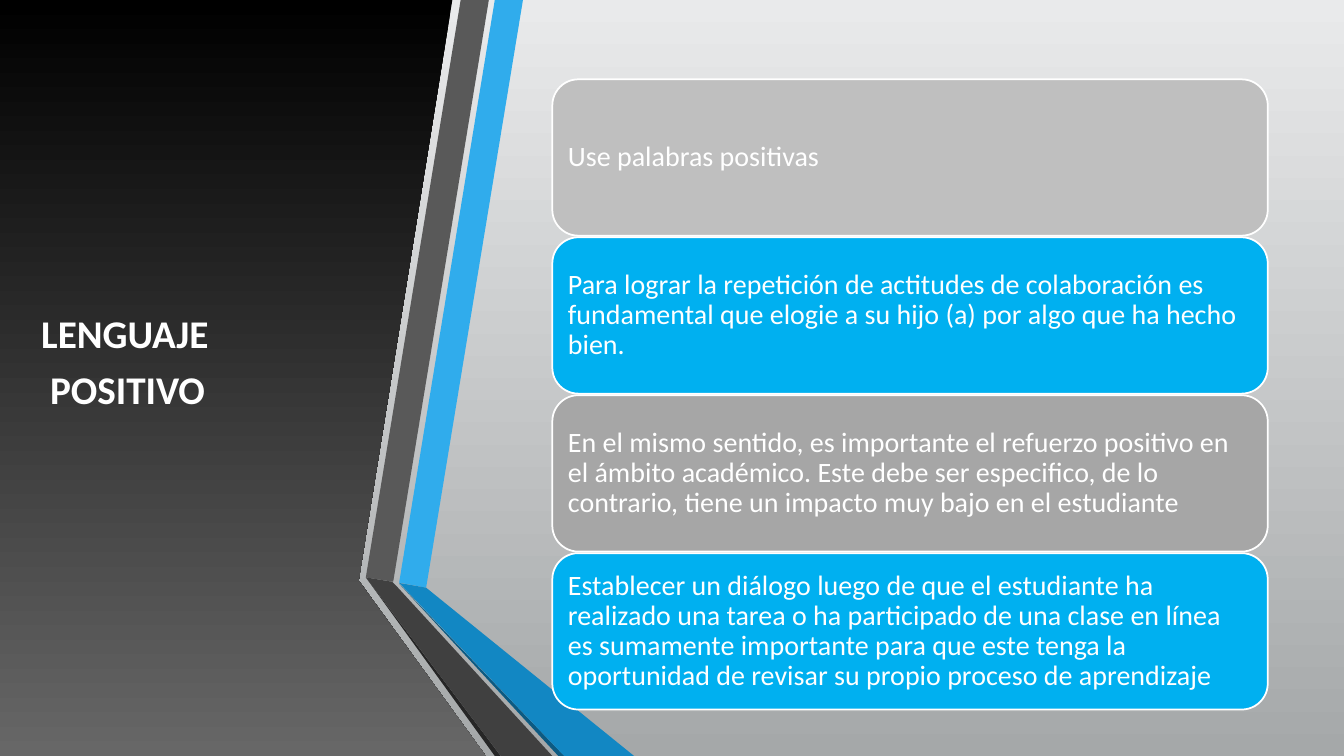
"""Build the slide on positive language: a folded ribbon beside four stacked cards."""
from pptx import Presentation
from pptx.dml.color import RGBColor
from pptx.enum.shapes import MSO_SHAPE
from pptx.enum.text import MSO_ANCHOR, PP_ALIGN
from pptx.util import Cm, Pt

THEME = {
    "font": "Calibri",
    "title_size": Pt(28),
    "card_size": Pt(20),
    "text": RGBColor.from_string("FFFFFF"),
    "backdrop": ("E9EAEB", "A5A8A9"),
    "panel": ("000000", "676767"),
    "blue": "30ACEC",
    "blue_fold": "1287C3",
    "blue_shade": "0C5A82",
    "gray": "595959",
    "gray_fold": "404040",
    "gray_shade": "262626",
    "cards": ("BFBFBF", "00B0F0", "A6A6A6", "00B0F0"),
}


def paint(fill, colors):
    """Fill with one colour, or with a gradient given as (top, bottom)."""
    if isinstance(colors, str):
        fill.solid()
        fill.fore_color.rgb = RGBColor.from_string(colors)
        return
    fill.gradient()
    fill.gradient_angle = 270
    for stop, color in zip(fill.gradient_stops, colors):
        stop.color.rgb = RGBColor.from_string(color)


def write(shape, lines, frame_format, paragraph_format, font_format):
    """Write one paragraph per line and apply the format values."""
    frame = shape.text_frame
    for name, value in frame_format.items():
        setattr(frame, name, value)
    for index, line in enumerate(lines):
        paragraph = frame.add_paragraph() if index else frame.paragraphs[0]
        for name, value in paragraph_format.items():
            setattr(paragraph, name, value)
        run = paragraph.add_run()
        run.text = line
        run.font.color.rgb = THEME["text"]
        for name, value in font_format.items():
            setattr(run.font, name, value)


presentation = Presentation()
presentation.slide_width = Cm(33.87)
presentation.slide_height = Cm(19.05)
slide = presentation.slides.add_slide(presentation.slide_layouts[6])
paint(slide.background.fill, THEME["backdrop"])

bottom = 19.05
polygons = [
    ("panel", [(0, 0), (11.4, 0), (9.04, 14.63), (12.24, bottom), (0, bottom)]),
    ("blue", [(10.06, 14.68), (10.74, 14.81), (13.18, 0), (12.47, 0)]),
    ("gray", [(12.32, 0), (11.61, 0), (9.22, 14.55), (9.91, 14.66)]),
    ("gray_shade", [(9.22, 14.55), (12.47, bottom), (12.62, bottom)]),
    ("blue_shade", [(10.06, 14.71), (14.07, bottom), (14.22, bottom)]),
    ("blue_fold", [(10.06, 14.69), (14.22, bottom), (15.98, bottom), (10.74, 14.81)]),
    ("gray_fold", [(13.92, bottom), (10.03, 14.81), (9.88, 14.66), (9.22, 14.55), (12.62, bottom)]),
]
for color_name, points in polygons:
    corners = [(Cm(x), Cm(y)) for x, y in points]
    builder = slide.shapes.build_freeform(*corners[0])
    builder.add_line_segments(corners[1:], close=True)
    polygon = builder.convert_to_shape()
    polygon.shadow.inherit = False
    polygon.line.fill.background()
    paint(polygon.fill, THEME[color_name])

title = slide.shapes.add_textbox(Cm(0.79), Cm(4.62), Cm(8), Cm(8.95))
write(
    title,
    ["LENGUAJE", " POSITIVO"],
    {"word_wrap": True, "vertical_anchor": MSO_ANCHOR.MIDDLE},
    {"space_after": Pt(6)},
    {"name": THEME["font"], "size": THEME["title_size"], "bold": True},
)

card_texts = [
    "Use palabras positivas",
    "Para lograr la repetición de actitudes de colaboración es fundamental que elogie "
    "a su hijo (a) por algo que ha hecho bien.",
    "En el mismo sentido, es importante el refuerzo positivo en el ámbito académico. "
    "Este debe ser especifico, de lo contrario, tiene un impacto muy bajo en el estudiante",
    "Establecer un diálogo luego de que el estudiante ha realizado una tarea o ha "
    "participado de una clase en línea es sumamente importante para que este tenga la "
    "oportunidad de revisar su propio proceso de aprendizaje",
]
card_frame = {"word_wrap": True, "vertical_anchor": MSO_ANCHOR.MIDDLE}
for side in ("left", "top", "right", "bottom"):
    card_frame[f"margin_{side}"] = Cm(0.2)
card_top, card_pitch = 2, 3.98
for index, (text, color) in enumerate(zip(card_texts, THEME["cards"])):
    card = slide.shapes.add_shape(
        MSO_SHAPE.ROUNDED_RECTANGLE,
        Cm(13.92), Cm(card_top + index * card_pitch), Cm(18.03), Cm(3.94),
    )
    card.shadow.inherit = False
    paint(card.fill, color)
    card.line.color.rgb = THEME["text"]
    card.line.width = Pt(1.25)
    write(
        card,
        [text],
        card_frame,
        {"alignment": PP_ALIGN.LEFT, "line_spacing": 0.9},
        {"name": THEME["font"], "size": THEME["card_size"]},
    )

presentation.save("out.pptx")
